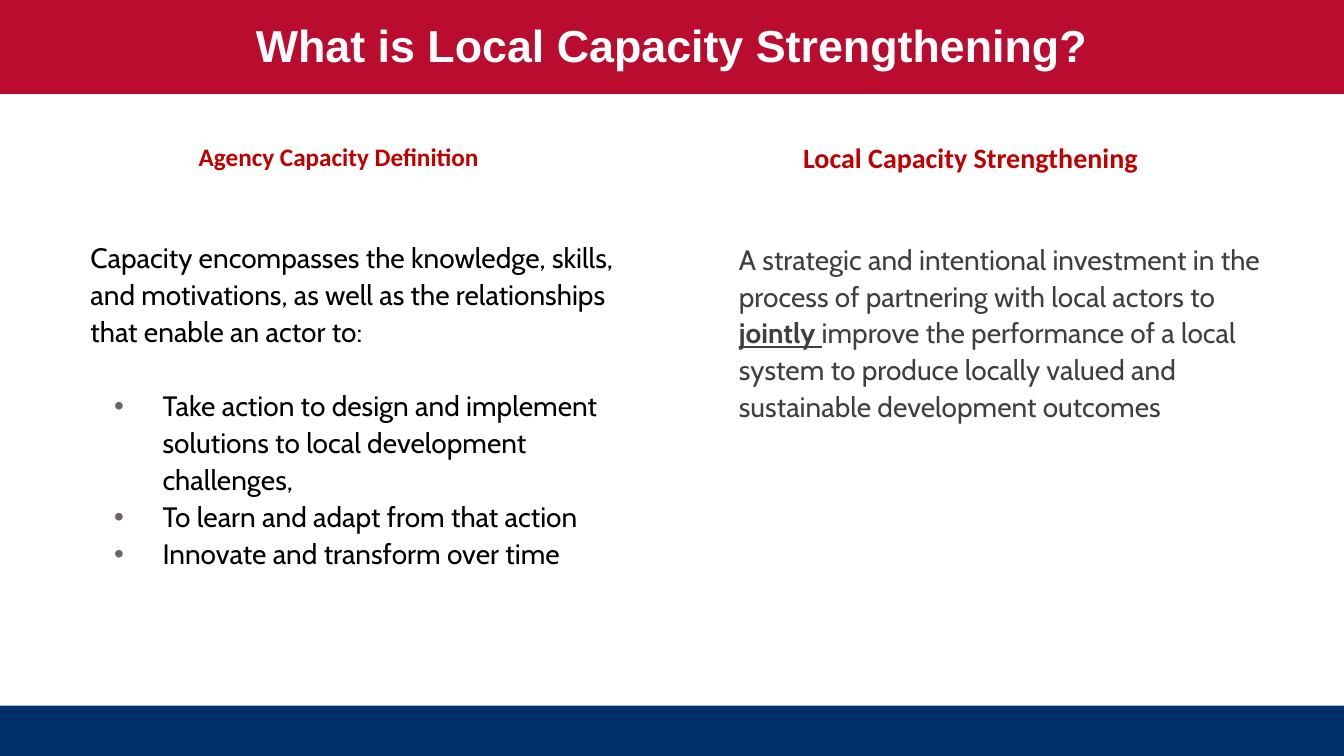
from lxml import etree
from pptx import Presentation
from pptx.dml.color import RGBColor
from pptx.enum.shapes import MSO_SHAPE
from pptx.enum.text import MSO_ANCHOR, PP_ALIGN
from pptx.oxml.ns import qn
from pptx.util import Pt

RECTANGLE = MSO_SHAPE.RECTANGLE
TOP, MIDDLE = MSO_ANCHOR.TOP, MSO_ANCHOR.MIDDLE
LEFT, CENTER = PP_ALIGN.LEFT, PP_ALIGN.CENTER

WIDTH, HEIGHT = 960, 540
WHITE, RED, BLUE, HEADING_RED = "FFFFFF", "BA0C2F", "002F6C", "C00000"
BLACK, DARK_GRAY, BULLET_GRAY = "000000", "3F3F3F", "6C6463"

TITLE = "What is Local Capacity Strengthening?"
# text, size, box (left, top, width, height)
HEADINGS = [
    ("Agency Capacity Definition", 18, (12, 97.5, 460, 29)),
    ("Local Capacity Strengthening ", 20, (488, 97, 415, 32)),
]
DEFINITION = (
    "Capacity encompasses the knowledge, skills, and motivations, as well as "
    "the relationships that enable an actor to:"
)
ABILITIES = [
    "Take action to design and implement solutions to local development challenges,",
    "To learn and adapt from that action",
    "Innovate and transform over time",
]
# text, emphasized
STRENGTHENING = [
    ("A strategic and intentional investment in the process of partnering with local actors to ", False),
    ("jointly ", True),
    ("improve the performance of a local system to produce locally valued and "
     "sustainable development outcomes", False),
]
BODY_SIZE = 20
LINE_SPACING = 1.1
LINE_GAP = 27


def rgb(value):
    return RGBColor.from_string(value)


def add_panel(slide, box, fill, anchor=TOP, margin_y=3.6):
    panel = slide.shapes.add_shape(RECTANGLE, *map(Pt, box))
    panel.shadow.inherit = False
    panel.fill.solid()
    panel.fill.fore_color.rgb = rgb(fill)
    panel.line.fill.background()
    frame = panel.text_frame
    settings = {
        "word_wrap": True, "vertical_anchor": anchor,
        "margin_left": Pt(7.2), "margin_right": Pt(7.2),
        "margin_top": Pt(margin_y), "margin_bottom": Pt(margin_y),
    }
    for name, value in settings.items():
        setattr(frame, name, value)
    return frame


def add_run(paragraph, text, font, size, color, **styles):
    run = paragraph.add_run()
    run.text = text
    run.font.color.rgb = rgb(color)
    for name, value in {"name": font, "size": Pt(size), **styles}.items():
        setattr(run.font, name, value)


def format_body(paragraph, margin, indent=0, bullet=None):
    """Set left alignment, spacing, indents in points and an optional bullet."""
    paragraph.alignment = LEFT
    paragraph.line_spacing = LINE_SPACING
    properties = paragraph._p.get_or_add_pPr()
    properties.set("marL", str(Pt(margin)))
    properties.set("indent", str(Pt(indent)))
    if bullet:
        color = etree.SubElement(properties, qn("a:buClr"))
        etree.SubElement(color, qn("a:srgbClr"), val=BULLET_GRAY)
        etree.SubElement(properties, qn("a:buFont"), typeface="Arial")
        etree.SubElement(properties, qn("a:buChar"), char=bullet)


def main():
    deck = Presentation()
    deck.slide_width, deck.slide_height = Pt(WIDTH), Pt(HEIGHT)
    slide = deck.slides.add_slide(deck.slide_layouts[6])

    add_panel(slide, (0, HEIGHT - 36, WIDTH, 36), BLUE)
    banner = add_panel(slide, (0, -3.6, WIDTH, 70.6), RED, MIDDLE).paragraphs[0]
    banner.alignment = CENTER
    add_run(banner, TITLE, "Arial", 32, WHITE, bold=True)

    capacity = add_panel(slide, (44, 162, 403, 333), WHITE, margin_y=7.2)
    definition = capacity.paragraphs[0]
    definition.space_after = Pt(LINE_GAP)
    format_body(definition, 13.5)
    add_run(definition, DEFINITION, "Cabin", BODY_SIZE, BLACK)
    for ability in ABILITIES:
        item = capacity.add_paragraph()
        item.level = 1
        format_body(item, 65, -34.5, "•")
        add_run(item, ability, "Cabin", BODY_SIZE, BLACK)

    strengthening = add_panel(slide, (513.5, 167, 403, 295), WHITE).paragraphs[0]
    format_body(strengthening, 7.2)
    for text, emphasized in STRENGTHENING:
        add_run(strengthening, text, "Cabin", BODY_SIZE, DARK_GRAY,
                bold=emphasized, underline=emphasized)

    for text, size, box in HEADINGS:
        heading = add_panel(slide, box, WHITE).paragraphs[0]
        heading.alignment = CENTER
        add_run(heading, text, "Calibri", size, HEADING_RED, bold=True)

    deck.save("out.pptx")


if __name__ == "__main__":
    main()
